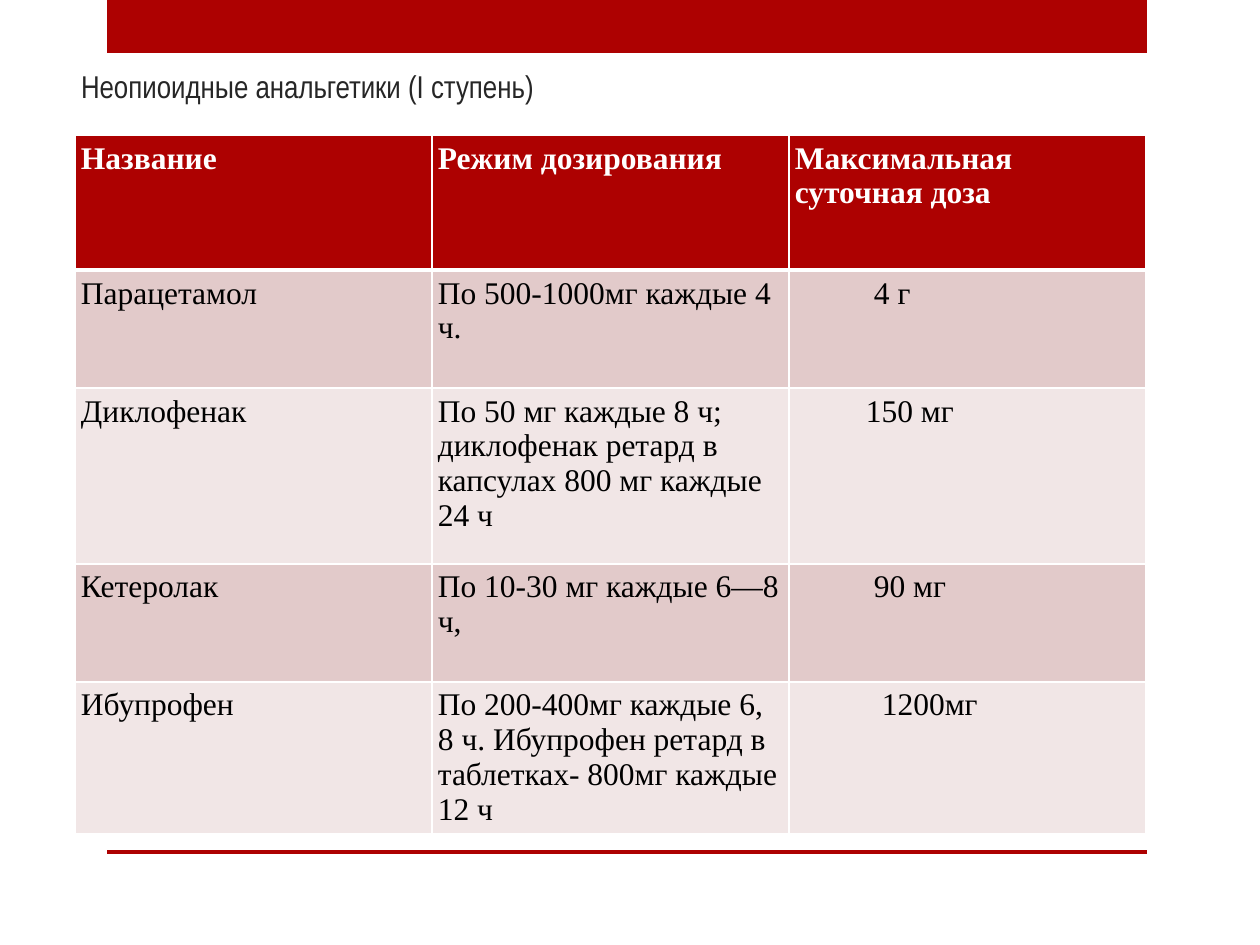
from lxml.etree import SubElement
from pptx import Presentation
from pptx.dml.color import RGBColor
from pptx.enum.shapes import MSO_SHAPE as Shape
from pptx.enum.text import MSO_ANCHOR as Anchor, MSO_AUTO_SIZE as AutoSize, PP_ALIGN as Align
from pptx.oxml.ns import qn
from pptx.util import Emu, Pt

COLORS = {
    "red": "AD0101",
    "rose": "E2CACA",
    "pale": "F1E6E6",
    "white": "FFFFFF",
    "black": "000000",
    "title": "262626",
}
INSET = 6
COLUMN_WIDTH = 357
ROW_HEIGHTS = [135, 118, 176, 118, 152]
DOSE_INDENTS = [0, 79, 71, 79, 87]
ROWS = [
    ("Название", "Режим дозирования", "Максимальная суточная доза"),
    ("Парацетамол", "По 500-1000мг каждые 4 ч.", "4 г"),
    ("Диклофенак", "По 50 мг каждые 8 ч; диклофенак ретард в капсулах 800 мг каждые 24 ч", "150 мг"),
    ("Кетеролак", "По 10-30 мг каждые 6—8 ч,", "90 мг"),
    ("Ибупрофен", "По 200-400мг каждые 6, 8 ч. Ибупрофен ретард в таблетках- 800мг каждые 12 ч", "1200мг"),
]


def px(length):
    """Turn pixels into EMU."""
    return Emu(round(length * 914400 / 126))


def rgb(name):
    """Look up a named colour."""
    return RGBColor.from_string(COLORS[name])


def style_text(frame, font, color, bold=False):
    """Format every run of a text frame."""
    for para in frame.paragraphs:
        para.alignment = Align.LEFT
        for span in para.runs:
            span.font.name = font
            span.font.size = Pt(18)
            span.font.bold = bold
            span.font.color.rgb = rgb(color)


def add_band(page, top, height):
    """Draw a red band across the page."""
    band = page.shapes.add_shape(Shape.RECTANGLE, px(107), px(top), px(1040), px(height))
    band.shadow.inherit = False
    band.fill.solid()
    band.fill.fore_color.rgb = rgb("red")
    band.line.fill.background()


def set_title(page, text):
    """Place and format the title placeholder."""
    title = page.shapes.title
    title.left, title.top, title.width, title.height = px(75), px(45), px(935), px(102)
    frame = title.text_frame
    frame.text = text
    frame.word_wrap = True
    frame.auto_size = AutoSize.NONE
    frame.vertical_anchor = Anchor.BOTTOM
    frame.margin_left = frame.margin_top = frame.margin_right = px(INSET)
    frame.margin_bottom = px(42)
    style_text(frame, "Arial Narrow", "title")


def set_borders(cell, top, bottom):
    """Give a cell white borders, with top and bottom widths in points."""
    properties = cell._tc.get_or_add_tcPr()
    for side, width in (("L", 1), ("R", 1), ("T", top), ("B", bottom)):
        line = SubElement(properties, qn(f"a:ln{side}"), w=str(Pt(width)))
        fill = SubElement(line, qn("a:solidFill"))
        SubElement(fill, qn("a:srgbClr"), val=COLORS["white"])


def fill_cell(cell, text, row, indent):
    """Write and format one cell according to its row."""
    header = row == 0
    cell.text = text
    cell.margin_left = px(INSET + indent)
    cell.margin_top = cell.margin_right = cell.margin_bottom = px(INSET)
    set_borders(cell, 3 if row == 1 else 1, 3 if header else 1)
    cell.fill.solid()
    cell.fill.fore_color.rgb = rgb("red" if header else "rose" if row % 2 else "pale")
    style_text(cell.text_frame, "Times New Roman", "white" if header else "black", header)


def add_dose_table(page):
    """Add the table of drugs and doses."""
    columns = len(ROWS[0])
    table = page.shapes.add_table(
        len(ROWS), columns, px(75), px(135), px(columns * COLUMN_WIDTH), px(sum(ROW_HEIGHTS))
    ).table
    for column in table.columns:
        column.width = px(COLUMN_WIDTH)
    for row, (texts, height) in enumerate(zip(ROWS, ROW_HEIGHTS)):
        table.rows[row].height = px(height)
        for column, text in enumerate(texts):
            indent = DOSE_INDENTS[row] if column == columns - 1 else 0
            fill_cell(table.cell(row, column), text, row, indent)


def main():
    """Build and save the slide."""
    deck = Presentation()
    deck.slide_width, deck.slide_height = px(1260), px(945)
    page = deck.slides.add_slide(deck.slide_layouts[5])
    add_band(page, 0, 53)
    add_band(page, 850, 4)
    set_title(page, "Неопиоидные анальгетики (I ступень)")
    add_dose_table(page)
    deck.save("out.pptx")


if __name__ == "__main__":
    main()
